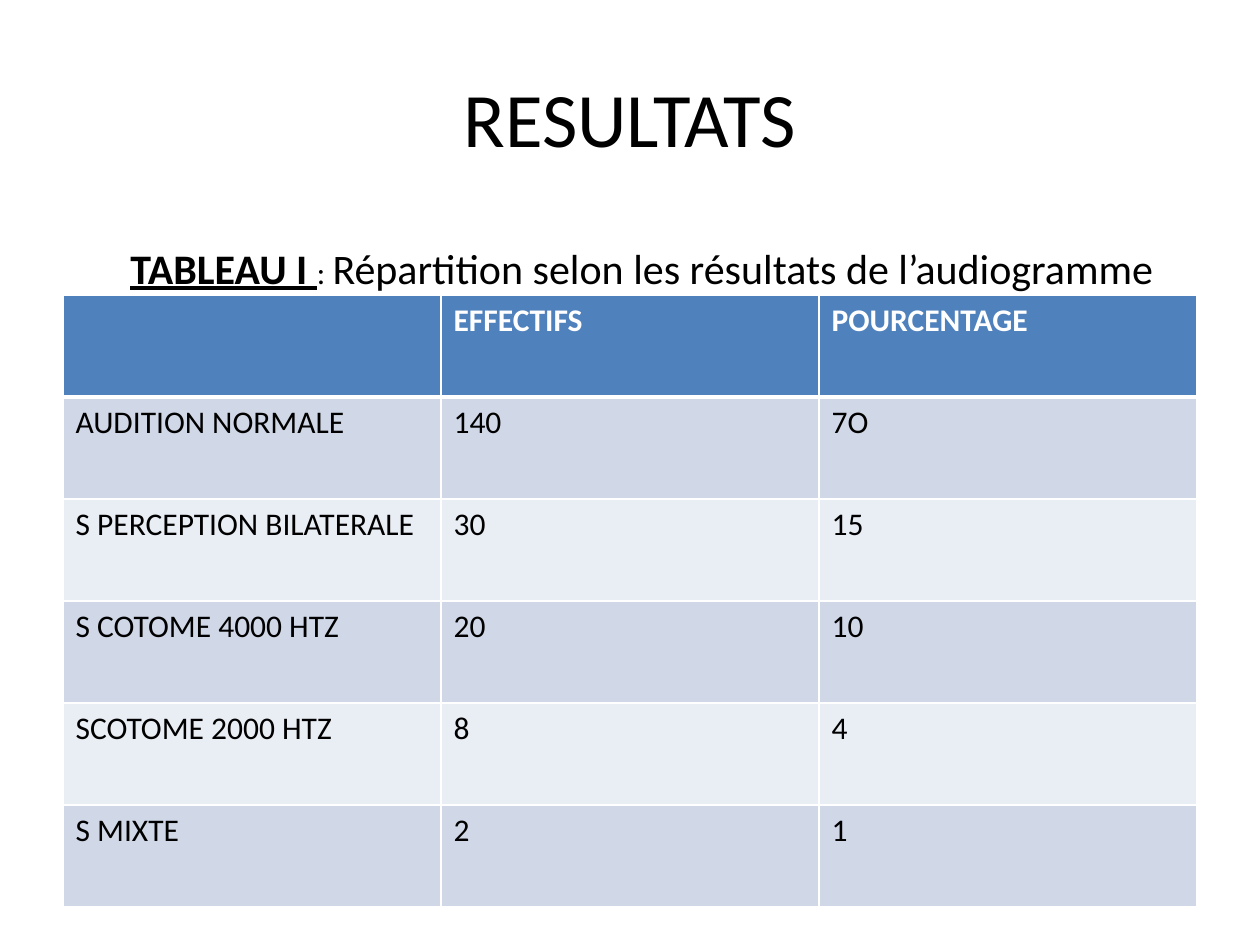
import pptx
import pptx.dml.color
import pptx.enum.text
import pptx.oxml
import pptx.oxml.ns
import pptx.util

EMU_PER_PX = 914400 / 126


class Theme:
    font = "Calibri"
    ink = "000000"
    white = "FFFFFF"
    header = "4F81BD"
    bands = ("D0D8E8", "E9EDF4")
    title_size = 44
    caption_size = 24
    table_size = 18
    border = 1
    header_border = 3


ROWS = [
    ("", "EFFECTIFS", "POURCENTAGE"),
    ("AUDITION NORMALE", "140", "7O"),
    ("S PERCEPTION BILATERALE", "30", "15"),
    ("S COTOME 4000 HTZ", "20", "10"),
    ("SCOTOME 2000 HTZ", "8", "4"),
    ("S MIXTE", "2", "1"),
]


def px(length):
    return pptx.util.Emu(round(length * EMU_PER_PX))


def rgb(color):
    return pptx.dml.color.RGBColor.from_string(color)


def add_text(para, text, size=Theme.table_size, color=Theme.ink, bold=False, underline=False):
    span = para.add_run()
    span.text = text
    span.font.name = Theme.font
    span.font.size = pptx.util.Pt(size)
    span.font.color.rgb = rgb(color)
    span.font.bold = bold
    span.font.underline = underline


def add_box(page, left, top, width, height, anchor=pptx.enum.text.MSO_ANCHOR.TOP):
    """Add a wrapping text box and return its first paragraph."""
    box = page.shapes.add_textbox(px(left), px(top), px(width), px(height))
    box.text_frame.word_wrap = True
    box.text_frame.vertical_anchor = anchor
    return box.text_frame.paragraphs[0]


def set_borders(cell, bottom=Theme.border, top=Theme.border):
    """Draw white cell borders; they must precede the fill in the XML."""
    properties = cell._tc.get_or_add_tcPr()
    widths = {"lnL": Theme.border, "lnR": Theme.border, "lnT": top, "lnB": bottom}
    for index, (side, width) in enumerate(widths.items()):
        line = pptx.oxml.parse_xml(
            f'<a:{side} {pptx.oxml.ns.nsdecls("a")} w="{pptx.util.Pt(width)}">'
            f'<a:solidFill><a:srgbClr val="{Theme.white}"/></a:solidFill></a:{side}>'
        )
        properties.insert(index, line)


def add_results_table(page, left, top, column_width, row_height):
    column_count = len(ROWS[0])
    table = page.shapes.add_table(
        len(ROWS), column_count, px(left), px(top),
        px(column_width * column_count), px(row_height * len(ROWS)),
    ).table
    for row_index, values in enumerate(ROWS):
        is_header = row_index == 0
        fill = Theme.header if is_header else Theme.bands[(row_index - 1) % 2]
        for column_index, value in enumerate(values):
            cell = table.cell(row_index, column_index)
            cell.fill.solid()
            cell.fill.fore_color.rgb = rgb(fill)
            set_borders(
                cell,
                bottom=Theme.header_border if is_header else Theme.border,
                top=Theme.header_border if row_index == 1 else Theme.border,
            )
            if value:
                add_text(
                    cell.text_frame.paragraphs[0], value,
                    color=Theme.white if is_header else Theme.ink, bold=is_header,
                )


def main():
    deck = pptx.Presentation()
    deck.slide_width, deck.slide_height = px(1260), px(945)
    page = deck.slides.add_slide(deck.slide_layouts[6])

    # Title
    title = add_box(page, 63, 38, 1134, 158, anchor=pptx.enum.text.MSO_ANCHOR.MIDDLE)
    title.alignment = pptx.enum.text.PP_ALIGN.CENTER
    add_text(title, "RESULTATS", size=Theme.title_size)

    # Table of results
    add_results_table(page, left=63, top=295, column_width=378, row_height=102)

    # Table caption
    caption = add_box(page, 118, 236, 1053, 63)
    add_text(caption, "TABLEAU I ", size=Theme.caption_size, bold=True, underline=True)
    add_text(caption, ": ")
    add_text(caption, "Répartition selon les résultats de l’audiogramme", size=Theme.caption_size)

    deck.save("out.pptx")


if __name__ == "__main__":
    main()
